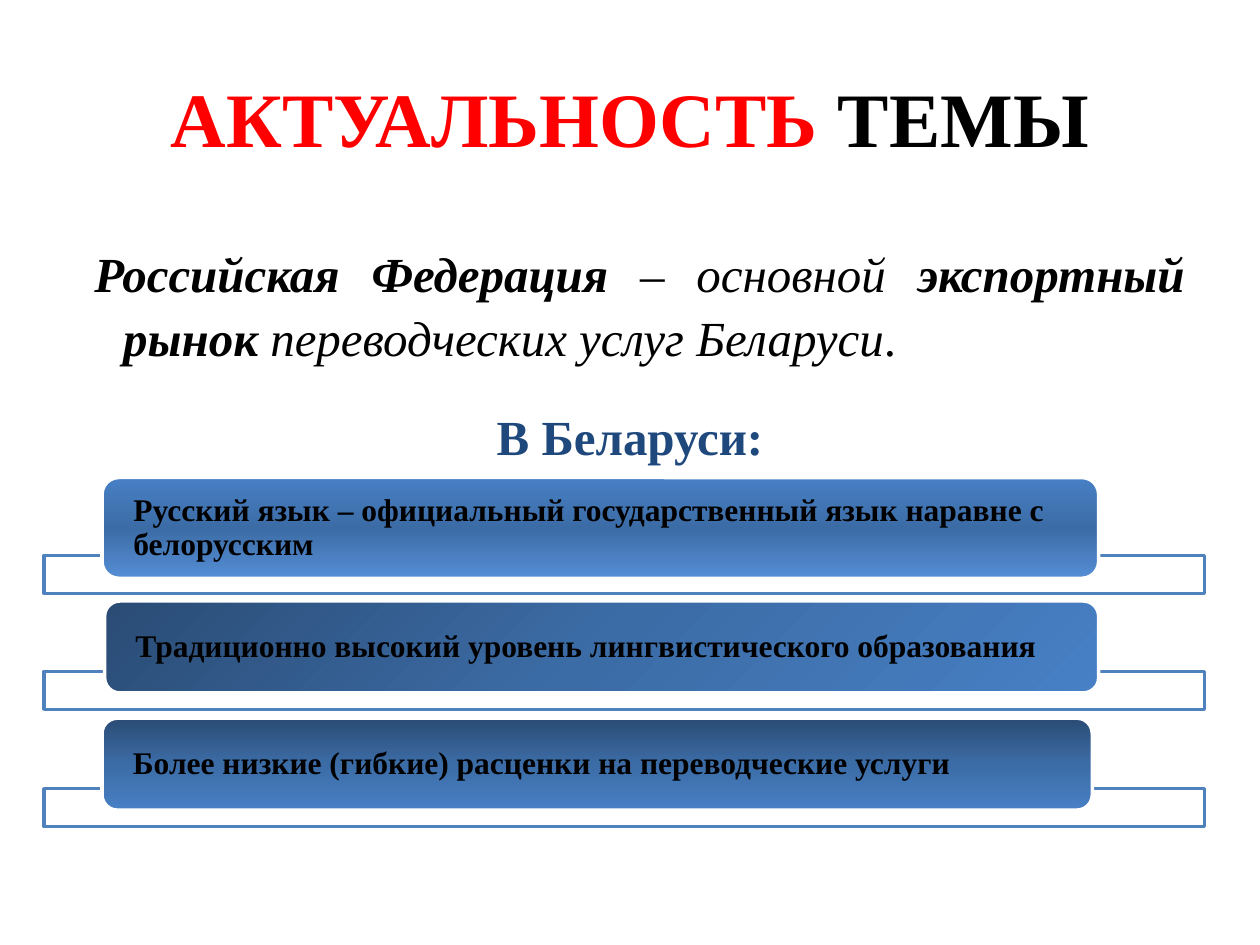
import copy

import pptx
import pptx.dml.color
import pptx.enum.shapes
import pptx.enum.text
import pptx.oxml.ns
import pptx.util

PX = 9144
RGB = pptx.dml.color.RGBColor
Pt = pptx.util.Pt
SHAPE = pptx.enum.shapes.MSO_SHAPE
ALIGN = pptx.enum.text.PP_ALIGN
MIDDLE = pptx.enum.text.MSO_ANCHOR.MIDDLE
RED = RGB(0xFF, 0x00, 0x00)
BLACK = RGB(0x00, 0x00, 0x00)
WHITE = RGB(0xFF, 0xFF, 0xFF)
NAVY = RGB(0x1F, 0x49, 0x7D)
BLUE = RGB(0x4F, 0x81, 0xBD)
SKY = RGB(0x55, 0x8E, 0xD5)
DEEP = RGB(0x2A, 0x4C, 0x75)
MID = RGB(0x3C, 0x6C, 0xA6)
LIGHT = RGB(0x47, 0x80, 0xC5)
FACE = "Times New Roman"

ROWS = [
    ("Русский язык – официальный государственный язык наравне с белорусским",
     (46, 0, 791, 80), SKY, 90),
    ("Традиционно высокий уровень лингвистического образования",
     (48, 98, 789, 73), DEEP, 315),
    ("Более низкие (гибкие) расценки на переводческие услуги",
     (46, 191, 786, 73), DEEP, 270),
]


def style(item, form):
    """Set each format value on the item."""
    for name, value in form.items():
        setattr(item, name, value)


def scale(*sizes):
    """Turn px lengths into EMU."""
    return [size * PX for size in sizes]


def write(para, runs, size):
    """Add runs of text, colour, bold and italic to a paragraph."""
    for text, color, bold, slant in runs:
        run = para.add_run()
        run.text = text
        style(run.font, {"name": FACE, "size": Pt(size), "bold": bold, "italic": slant})
        run.font.color.rgb = color


def frame(slide, box):
    """Add a wrapping text box and return its text frame."""
    text = slide.shapes.add_textbox(*scale(*box)).text_frame
    text.word_wrap = True
    return text


def title(slide, box):
    """Place the slide title."""
    text = frame(slide, box)
    text.vertical_anchor = MIDDLE
    para = text.paragraphs[0]
    para.alignment = ALIGN.CENTER
    write(para, [("АКТУАЛЬНОСТЬ", RED, True, False), (" ТЕМЫ", BLACK, True, False)], 44)


def body(slide, box):
    """Place the statement and the list heading."""
    text = frame(slide, box)
    para = text.paragraphs[0]
    style(para, {"alignment": ALIGN.JUSTIFY, "line_spacing": 1.08})
    for name, size in {"marL": 38, "indent": -23}.items():
        para._p.get_or_add_pPr().set(name, str(size * PX))
    write(para, [
        ("Российская Федерация ", BLACK, True, True),
        ("– основной ", BLACK, False, True),
        ("экспортный рынок ", BLACK, True, True),
        ("переводческих услуг Беларуси", BLACK, False, True),
        (".", BLACK, False, False),
    ], 28)
    head = text.add_paragraph()
    style(head, {"alignment": ALIGN.CENTER, "space_before": Pt(23)})
    write(head, [("В Беларуси:", NAVY, True, False)], 28)


def block(slide, kind, box, line):
    """Add an outlined shape without a shadow."""
    shape = slide.shapes.add_shape(kind, *scale(*box))
    shape.shadow.inherit = False
    shape.line.color.rgb = line
    shape.line.width = Pt(2)
    return shape


def blend(shape, colors, angle):
    """Fill a shape with evenly spaced gradient colours."""
    shape.fill.gradient()
    shape.fill.gradient_angle = angle
    stops = shape._element.spPr.find(".//" + pptx.oxml.ns.qn("a:gsLst"))
    stops.append(copy.deepcopy(stops[0]))
    for i, (stop, color) in enumerate(zip(shape.fill.gradient_stops, colors)):
        stop.position = i / (len(colors) - 1)
        stop.color.rgb = color


def bars(slide, box):
    """Place the three rails with their bars."""
    left, top, width, height = box
    step = (height - 92) / 2
    for i, (words, (x, y, w, h), start, angle) in enumerate(ROWS):
        rail = block(slide, SHAPE.RECTANGLE,
                     (left, top + 62 + round(i * step), width, 30), BLUE)
        rail.fill.solid()
        rail.fill.fore_color.rgb = WHITE
        bar = block(slide, SHAPE.ROUNDED_RECTANGLE, (left + x, top + y, w, h), WHITE)
        blend(bar, (start, MID, LIGHT), angle)
        side = 21 * PX
        style(bar.text_frame, {
            "word_wrap": True, "vertical_anchor": MIDDLE, "margin_left": side,
            "margin_right": side, "margin_top": 0, "margin_bottom": 0})
        para = bar.text_frame.paragraphs[0]
        style(para, {"alignment": ALIGN.LEFT, "line_spacing": 0.9})
        write(para, [(words, BLACK, True, False)], 18)


def main():
    """Build and save the slide."""
    deck = pptx.Presentation()
    style(deck, {"slide_width": 1000 * PX, "slide_height": 750 * PX})
    slide = deck.slides.add_slide(deck.slide_layouts[6])
    title(slide, (50, 30, 900, 125))
    body(slide, (50, 185, 900, 190))
    bars(slide, (35, 379, 921, 277))
    deck.save("out.pptx")


if __name__ == "__main__":
    main()
